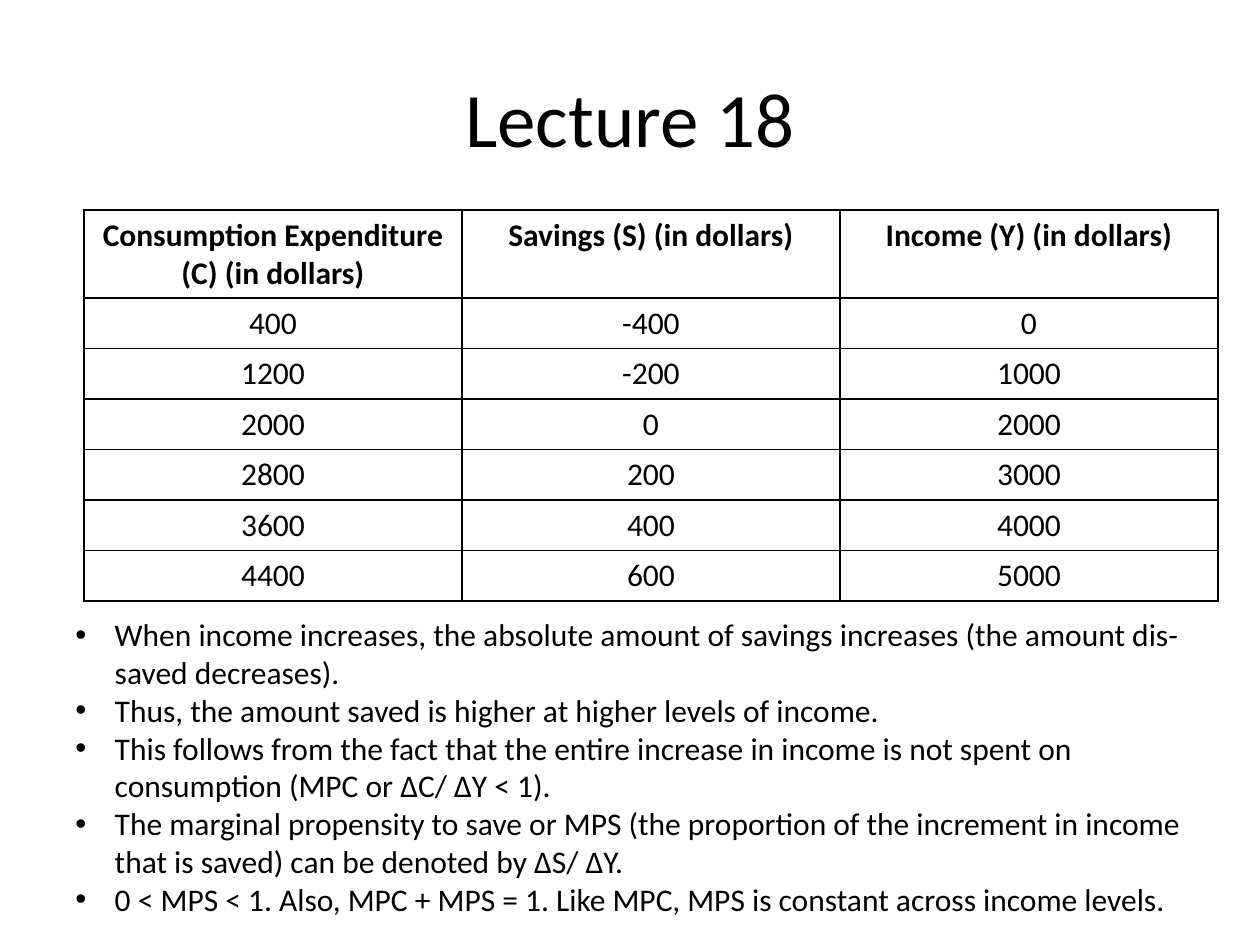
from pptx import Presentation
from pptx.dml.color import RGBColor
from pptx.enum.text import MSO_ANCHOR as Anchor, MSO_AUTO_SIZE as AutoSize, PP_ALIGN as Align
from pptx.oxml import parse_xml
from pptx.oxml.ns import nsdecls
from pptx.util import Pt

COLORS = {"text": "000000", "border": "000000"}
HEADERS = ["Consumption Expenditure (C) (in dollars)", "Savings (S) (in dollars)", "Income (Y) (in dollars)"]
ROWS = [
    (400, -400, 0),
    (1200, -200, 1000),
    (2000, 0, 2000),
    (2800, 200, 3000),
    (3600, 400, 4000),
    (4400, 600, 5000),
]
POINTS = [
    "When income increases, the absolute amount of savings increases (the amount dis-saved decreases).",
    "Thus, the amount saved is higher at higher levels of income.",
    "This follows from the fact that the entire increase in income is not spent on "
    "consumption (MPC or ∆C/ ∆Y < 1).",
    "The marginal propensity to save or MPS (the proportion of the increment in income "
    "that is saved) can be denoted by ∆S/ ∆Y.",
    "0 < MPS < 1. Also, MPC + MPS = 1. Like MPC, MPS is constant across income levels.",
]


class LectureSlide:
    """Holds the text style and the current slide, and adds elements to it."""

    font_name = "Calibri"
    body_size = 18
    indent = 22.5
    border_width = 1

    def __init__(self, slide):
        self.slide = slide

    def add_run(self, paragraph, text, size, bold=False):
        run = paragraph.add_run()
        run.text = text
        run.font.name = self.font_name
        run.font.size = Pt(size)
        run.font.bold = bold
        run.font.color.rgb = RGBColor.from_string(COLORS["text"])

    def add_text_frame(self, left, top, width, height, anchor):
        shape = self.slide.shapes.add_textbox(Pt(left), Pt(top), Pt(width), Pt(height))
        frame = shape.text_frame
        frame.word_wrap = True
        frame.vertical_anchor = anchor
        return frame

    def add_title(self, text, left, top, width, height):
        frame = self.add_text_frame(left, top, width, height, Anchor.MIDDLE)
        paragraph = frame.paragraphs[0]
        paragraph.alignment = Align.CENTER
        self.add_run(paragraph, text, 44)

    def add_bullets(self, texts, left, top, width, height):
        frame = self.add_text_frame(left, top, width, height, Anchor.TOP)
        frame.auto_size = AutoSize.SHAPE_TO_FIT_TEXT
        for index, text in enumerate(texts):
            paragraph = frame.add_paragraph() if index else frame.paragraphs[0]
            properties = paragraph._p.get_or_add_pPr()
            properties.set("marL", str(Pt(self.indent)))
            properties.set("indent", str(-Pt(self.indent)))
            properties.append(parse_xml(f'<a:buFont {nsdecls("a")} typeface="Arial"/>'))
            properties.append(parse_xml(f'<a:buChar {nsdecls("a")} char="•"/>'))
            self.add_run(paragraph, text, self.body_size)

    def add_borders(self, cell):
        properties = cell._tc.get_or_add_tcPr()
        for index, side in enumerate(("lnL", "lnR", "lnT", "lnB")):
            properties.insert(index, parse_xml(
                f'<a:{side} {nsdecls("a")} w="{Pt(self.border_width)}"><a:solidFill>'
                f'<a:srgbClr val="{COLORS["border"]}"/></a:solidFill></a:{side}>'))

    def add_table(self, headers, rows, left, top, width, header_height, row_height):
        height = header_height + row_height * len(rows)
        shape = self.slide.shapes.add_table(
            len(rows) + 1, len(headers), Pt(left), Pt(top), Pt(width), Pt(height))
        table = shape.table
        table.first_row = table.horz_banding = False
        for row_index, values in enumerate([headers, *rows]):
            is_header = row_index == 0
            table.rows[row_index].height = Pt(header_height if is_header else row_height)
            for column_index, value in enumerate(values):
                cell = table.cell(row_index, column_index)
                cell.fill.background()
                self.add_borders(cell)
                paragraph = cell.text_frame.paragraphs[0]
                paragraph.alignment = Align.CENTER
                self.add_run(paragraph, str(value), self.body_size, is_header)


def main():
    presentation = Presentation()
    presentation.slide_width, presentation.slide_height = Pt(720), Pt(540)
    lecture = LectureSlide(presentation.slides.add_slide(presentation.slide_layouts[6]))
    lecture.add_title("Lecture 18", 36, 21.6, 648, 90)
    lecture.add_table(HEADERS, ROWS, 48, 120, 648, 34, 28)
    lecture.add_bullets(POINTS, 36, 348, 648, 181.5)
    presentation.save("out.pptx")


if __name__ == "__main__":
    main()
